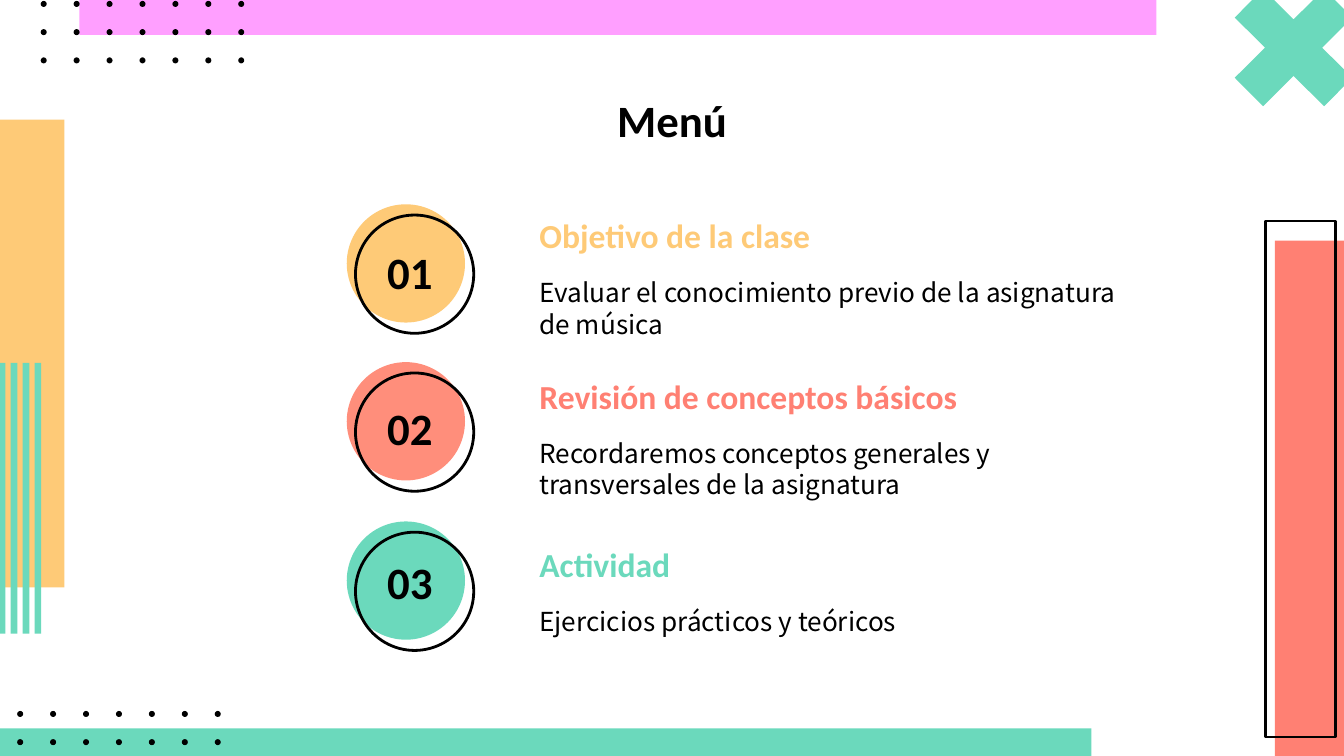
from pptx import Presentation
from pptx.dml.color import RGBColor
from pptx.enum.shapes import MSO_SHAPE
from pptx.enum.text import MSO_ANCHOR, PP_ALIGN
from pptx.util import Inches, Pt

RECT, OVAL, CROSS = MSO_SHAPE.RECTANGLE, MSO_SHAPE.OVAL, MSO_SHAPE.MATH_MULTIPLY
LEFT, CENTER = PP_ALIGN.LEFT, PP_ALIGN.CENTER
TOP, MIDDLE = MSO_ANCHOR.TOP, MSO_ANCHOR.MIDDLE

# Content: number, heading, body, disc colour, heading colour, tops of disc, heading, number
TITLE = "Menú"
ITEMS = [
    ("01", "Objetivo de la clase",
     "Evaluar el conocimiento previo de la asignatura de música",
     "yellow", "yellow", (152, 150, 166.5)),
    ("02", "Revisión de conceptos básicos",
     "Recordaremos conceptos generales y transversales de la asignatura",
     "salmon", "coral", (269.5, 269.5, 283)),
    ("03", "Actividad", "Ejercicios prácticos y teóricos",
     "mint", "mint", (388, 394.5, 397.5)),
]

THEME = {
    "yellow": "FECA77", "coral": "FF8073", "salmon": "FF8E7B",
    "mint": "6BD9BC", "pink": "FF9FFF", "black": "000000",
    "outline": Pt(1.5),
    "display": {"name": "Calibri", "size": Pt(24), "bold": True},
    "heading": {"name": "Calibri", "size": Pt(18), "bold": True},
    "body": {"name": "Noto Sans CJK KR", "size": Pt(14), "bold": False},
    "body_leading": Pt(17),
}

# Grid: 1000 columns of square cells on a 16:9 slide
COLUMNS = 1000
ROWS = COLUMNS * 9 / 16
CELL = Inches(10) // COLUMNS

# Decoration: shape, box in cells (left, top, width, height), fill, outlined
DECOR = [
    (RECT, (0, 89, 48, 348), "yellow", False),
    (RECT, (948.5, 179, 52, 384), "coral", False),
    (RECT, (941.5, 164.5, 52, 384), None, True),
    (CROSS, (898.5, -28, 128, 127), "mint", False),
    (RECT, (59, 0, 801.5, 26), "pink", False),
    (RECT, (0, 542, 812, 21), "mint", False),
]
# Repeated marks: shape, first box, columns, rows, column pitch, row pitch, fill
PATTERNS = [
    (RECT, (-1, 270, 5, 201.5), 4, 1, 8.9, 0, "mint"),
    (OVAL, (30.3, 0.7, 4.5, 4.5), 7, 3, 24.5, 21, "black"),
    (OVAL, (12.8, 529, 4.5, 4.5), 7, 2, 24.5, 21, "black"),
]
DISC_LEFT, DISC, RING_SHIFT = 258, 88, (6.5, 8)
NUMBER_SIZE = (94, 71)
TEXT_LEFT, TEXT_SIZE, BODY_DROP = 391.5, (459, 50), 45.5


def cells(box):
    return [round(value * CELL) for value in box]


def color(name):
    return RGBColor.from_string(THEME[name])


def add_figure(parent, kind, box, fill=None, outlined=False):
    figure = parent.shapes.add_shape(kind, *cells(box))
    figure.shadow.inherit = False
    if fill:
        figure.fill.solid()
        figure.fill.fore_color.rgb = color(fill)
    else:
        figure.fill.background()
    if outlined:
        figure.line.color.rgb = color("black")
        figure.line.width = THEME["outline"]
    else:
        figure.line.fill.background()


def add_text(page, text, box, style, ink="black", align=LEFT, anchor=TOP, leading=None):
    frame = page.shapes.add_textbox(*cells(box)).text_frame
    margins = dict.fromkeys(
        ("margin_left", "margin_top", "margin_right", "margin_bottom"), Inches(0.1))
    for key, value in {"word_wrap": True, "vertical_anchor": anchor, **margins}.items():
        setattr(frame, key, value)
    para = frame.paragraphs[0]
    para.alignment = align
    if leading:
        para.line_spacing = leading
    span = para.add_run()
    span.text = text
    for key, value in THEME[style].items():
        setattr(span.font, key, value)
    span.font.color.rgb = color(ink)


def main():
    deck = Presentation()
    deck.slide_width, deck.slide_height = cells((COLUMNS, ROWS))
    page = deck.slides.add_slide(deck.slide_layouts[6])

    # Edge decoration
    for figure in DECOR:
        add_figure(page, *figure)

    # Stripes and dot fields
    for kind, (left, top, width, height), columns, rows, step_x, step_y, fill in PATTERNS:
        group = page.shapes.add_group_shape()
        for index in range(columns * rows):
            row, column = divmod(index, columns)
            box = (left + column * step_x, top + row * step_y, width, height)
            add_figure(group, kind, box, fill)

    # Title
    add_text(page, TITLE, (290.5, 59, 419, 55), "display", align=CENTER)

    # Menu entries
    for number, heading, body, disc, ink, (disc_top, text_top, number_top) in ITEMS:
        badge = page.shapes.add_group_shape()
        add_figure(badge, OVAL, (DISC_LEFT, disc_top, DISC, DISC), disc)
        ring_left, ring_top = DISC_LEFT + RING_SHIFT[0], disc_top + RING_SHIFT[1]
        add_figure(badge, OVAL, (ring_left, ring_top, DISC, DISC), outlined=True)
        add_text(page, heading, (TEXT_LEFT, text_top, *TEXT_SIZE), "heading", ink)
        add_text(page, body, (TEXT_LEFT, text_top + BODY_DROP, *TEXT_SIZE), "body",
                 leading=THEME["body_leading"])
        add_text(page, number, (DISC_LEFT, number_top, *NUMBER_SIZE), "display",
                 align=CENTER, anchor=MIDDLE)

    deck.save("out.pptx")


if __name__ == "__main__":
    main()
